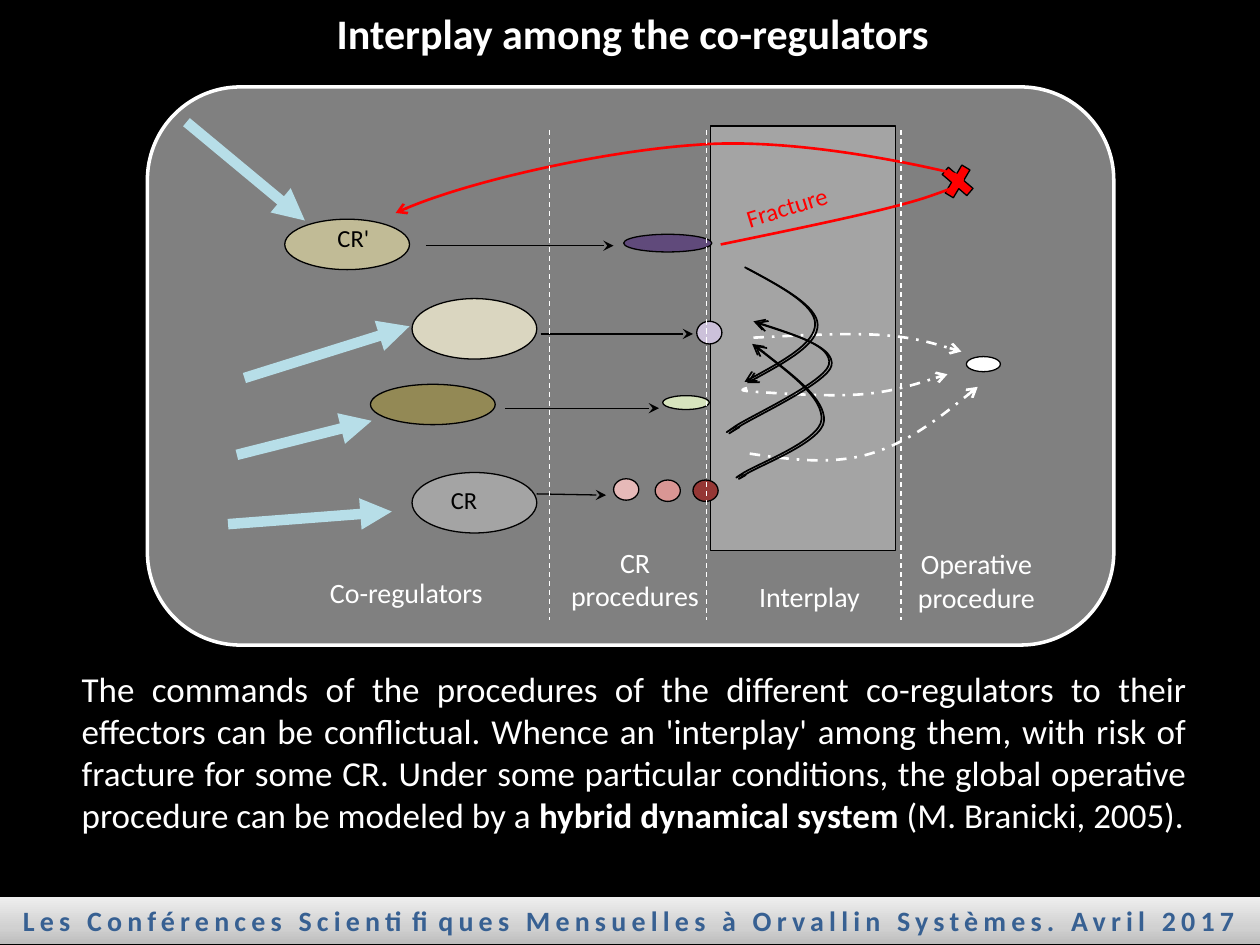
from copy import deepcopy

from lxml import etree
from pptx import Presentation
from pptx import util as u
from pptx.dml import color
from pptx.enum import dml, shapes, text
from pptx.oxml.ns import qn

COLORS = {
    "black": "000000", "white": "FFFFFF", "panel": "808080", "gray": "A6A6A6",
    "red": "FF0000", "sky": "B7DEE8", "footer": "376092",
    "sand": "C4BD97", "cream": "DDD9C3", "olive": "948A54",
    "purple": "604A7B", "lilac": "CCC1DA", "lime": "D7E4BD",
    "rose": "E6B9B8", "coral": "D99694", "brick": "953735",
}
FOOTER_STOPS = [(0, "BDBDBD"), (0.35, "D1D1D1"), (1, "EEEEEE")]
SHAPE = shapes.MSO_SHAPE
DASH = dml.MSO_LINE
ALIGN = text.PP_ALIGN


def rgb(name):
    return color.RGBColor.from_string(COLORS.get(name, name))


def add_span(para, words, size=16, ink="white", bold=False, spacing=None):
    span = para.add_run()
    span.text = words
    span.font.name = "Calibri"
    span.font.size = u.Pt(size)
    span.font.bold = bold
    span.font.color.rgb = rgb(ink)
    if spacing:
        span.font._element.set("spc", str(spacing * 100))


class SlideWriter:
    """Draws styled elements on the current slide."""

    def __init__(self, page):
        self.page = page

    def stroke(self, line, ink, width, dash=None, head=None, tail=None):
        line.color.rgb = rgb(ink)
        line.width = u.Pt(width)
        if dash:
            line.dash_style = dash
        for tag, kind in (("a:headEnd", head), ("a:tailEnd", tail)):
            if kind:
                etree.SubElement(line._get_or_add_ln(), qn(tag), type=kind)

    def shape(self, kind, left, top, width, height, fill, ink="black",
              line_width=0.75, opacity=100, rotation=0):
        shape = self.page.shapes.add_shape(
            kind, *map(u.Inches, (left, top, width, height)))
        shape.shadow.inherit = False
        shape.rotation = rotation
        shape.fill.solid()
        shape.fill.fore_color.rgb = rgb(fill)
        if opacity < 100:
            tint = shape._element.spPr.find(".//" + qn("a:srgbClr"))
            etree.SubElement(tint, qn("a:alpha"), val=str(opacity * 1000))
        self.stroke(shape.line, ink, line_width)
        return shape

    def ellipse(self, *place, **style):
        return self.shape(SHAPE.OVAL, *place, **style)

    def line(self, start, end, ink="black", width=0.75, dash=None, tail=None):
        line = self.page.shapes.add_connector(
            shapes.MSO_CONNECTOR.STRAIGHT, *map(u.Inches, (*start, *end)))
        etree.SubElement(line._element.spPr, qn("a:effectLst"))
        self.stroke(line.line, ink, width, dash, tail=tail)
        effects = line._element.spPr.find(qn("a:effectLst"))
        line._element.spPr.append(effects)

    def curve(self, points, ink, width, **ends):
        start, *rest = [tuple(map(u.Inches, point)) for point in points]
        builder = self.page.shapes.build_freeform(*start)
        builder.add_line_segments(rest, close=False)
        curve = builder.convert_to_shape()
        curve.shadow.inherit = False
        curve.fill.background()
        segments = list(curve._element.iter(qn("a:lnTo")))
        for i in range(0, len(segments), 3):
            bezier = etree.Element(qn("a:cubicBezTo"))
            segments[i].addprevious(bezier)
            for segment in segments[i:i + 3]:
                bezier.append(segment[0])
                segment.getparent().remove(segment)
        self.stroke(curve.line, ink, width, **ends)

    def text(self, left, top, width, height, *lines, align=ALIGN.CENTER,
             rotation=0, inset=0.05, **style):
        box = self.page.shapes.add_textbox(
            *map(u.Inches, (left, top, width, height)))
        box.rotation = rotation
        frame = box.text_frame
        frame.word_wrap = True
        frame.margin_top = frame.margin_bottom = u.Inches(inset)
        for i, words in enumerate(lines):
            para = frame.add_paragraph() if i else frame.paragraphs[0]
            para.alignment = align
            add_span(para, words, **style)
        return box

    def footer(self, words):
        bar = self.shape(SHAPE.RECTANGLE, 0, 7.12, 10, 0.37, "white")
        bar.line.fill.background()
        bar.fill.gradient()
        bar.fill.gradient_angle = 90
        stops = bar._element.find(".//" + qn("a:gsLst"))
        stops.append(deepcopy(stops[0]))
        for stop, (position, tint) in zip(bar.fill.gradient_stops, FOOTER_STOPS):
            stop.position = position
            stop.color.rgb = rgb(tint)
        effects = bar._element.spPr.find(qn("a:effectLst"))
        shadow = etree.SubElement(effects, qn("a:outerShdw"), blurRad="40000",
                                  dist="20000", dir="5400000", rotWithShape="0")
        tint = etree.SubElement(shadow, qn("a:srgbClr"), val=COLORS["black"])
        etree.SubElement(tint, qn("a:alpha"), val="38000")
        bar.text_frame.word_wrap = False
        para = bar.text_frame.paragraphs[0]
        para.alignment = ALIGN.CENTER
        add_span(para, words, ink="footer", bold=True, spacing=3)


def draw_regulators(writer):
    for start, end in [((4.29, 2.65), (5.5, 2.65)), ((3.38, 1.95), (4.87, 1.95)),
                       ((4.01, 3.24), (5.23, 3.24)), ((4.26, 3.92), (4.81, 3.93))]:
        writer.line(start, end, tail="stealth")
    for left, top, height, fill in [(3.27, 3.75, 0.48, "gray"), (2.94, 3.05, 0.32, "olive"),
                                    (2.26, 1.74, 0.4, "sand"), (3.27, 2.37, 0.48, "cream")]:
        writer.ellipse(left, top, 0.99, height, fill, opacity=97)
    for *place, fill in [(5.26, 3.14, 0.37, 0.11, "lime"), (4.95, 1.86, 0.7, 0.14, "purple"),
                         (5.53, 2.55, 0.2, 0.18, "lilac"), (4.87, 3.8, 0.2, 0.17, "rose"),
                         (5.2, 3.81, 0.2, 0.17, "coral"), (5.5, 3.81, 0.2, 0.17, "brick")]:
        writer.ellipse(*place, fill)
    for left, top, width, name in [(2.58, 1.77, 0.56, "CR'"), (3.48, 3.85, 0.62, "CR")]:
        writer.text(left, top, width, 0.24, name, align=ALIGN.JUSTIFY, inset=0,
                    size=14, ink="black")


def draw_interplay(writer):
    writer.ellipse(7.67, 2.83, 0.27, 0.12, "white")
    operative_curves = [
        [(5.95, 3.6), (6.28, 3.65), (6.61, 3.69), (6.91, 3.6), (7.21, 3.51), (7.49, 3.29),
         (7.76, 3.07)],
        [(5.93, 3.08), (5.89, 3.09), (5.85, 3.1), (6, 3.11), (6.15, 3.12), (6.57, 3.15),
         (6.83, 3.13), (7.08, 3.11), (7.3, 3.04), (7.52, 2.97)],
        [(5.98, 2.68), (6.36, 2.66), (6.73, 2.64), (7.01, 2.66), (7.28, 2.68), (7.63, 2.79),
         (7.63, 2.79)],
    ]
    for points in operative_curves:
        writer.curve(points, "white", 1.5, dash=DASH.DASH_DOT, tail="arrow")

    writer.text(5.81, 1.43, 1.14, 0.34, "Fracture", align=ALIGN.LEFT,
                rotation=342.6, size=14, ink="red")
    writer.shape(SHAPE.MATH_MULTIPLY, 7.44, 1.25, 0.32, 0.38, "red", rotation=350.8)
    writer.curve([(5.72, 1.94), (6.4, 1.8), (7.08, 1.66), (7.37, 1.56), (7.66, 1.46),
                  (7.76, 1.42), (7.46, 1.35), (7.15, 1.28), (6.24, 1.09), (5.52, 1.15),
                  (4.8, 1.2), (3.65, 1.45), (3.14, 1.69)], "red", 1.5, tail="arrow")

    conflict_curves = [
        ("head", [(6, 2.56), (6.31, 2.66), (6.62, 2.76), (6.6, 2.9), (6.57, 3.04),
                  (5.98, 3.31), (5.86, 3.39), (5.73, 3.48), (5.8, 3.43), (5.87, 3.39)]),
        ("tail", [(5.93, 2.13), (6.21, 2.28), (6.49, 2.43), (6.49, 2.58), (6.49, 2.73),
                  (6.21, 2.89), (5.93, 3.04)]),
        ("head", [(5.99, 2.74), (6.27, 2.96), (6.55, 3.17), (6.54, 3.34), (6.53, 3.51),
                  (6.01, 3.7), (5.91, 3.77), (5.8, 3.84), (5.92, 3.77), (5.92, 3.77)]),
    ]
    for dx, dy in [(0, 0), (-0.02, -0.01)]:
        for end, points in conflict_curves:
            writer.curve([(x + dx, y + dy) for x, y in points], "black", 1, **{end: "arrow"})


def main():
    deck = Presentation()
    deck.slide_width, deck.slide_height = u.Inches(10), u.Inches(7.5)
    page = deck.slides.add_slide(deck.slide_layouts[6])
    page.background.fill.solid()
    page.background.fill.fore_color.rgb = rgb("black")
    writer = SlideWriter(page)

    writer.footer("Les Conférences Scientifiques Mensuelles à Orvallin Systèmes. Avril 2017")
    writer.shape(SHAPE.ROUNDED_RECTANGLE, 1.17, 0.69, 7.67, 4.43, "panel", "white", 2)
    writer.shape(SHAPE.RECTANGLE, 5.64, 1, 1.47, 3.37, "gray", opacity=95)
    writer.text(2.06, 0.01, 5.85, 0.5, " Interplay among the co-regulators", size=24, bold=True)

    draw_regulators(writer)
    draw_interplay(writer)
    for x in (4.36, 5.61, 7.15):
        writer.line((x, 1.03), (x, 4.92), "white", dash=DASH.DASH)
    for start, end in [((1.94, 3), (3.25, 2.59)), ((1.48, 0.97), (2.42, 1.75)),
                       ((1.88, 3.61), (2.95, 3.34)), ((1.81, 4.16), (3.11, 4.06))]:
        writer.line(start, end, "sky", 6, tail="triangle")

    writer.text(2.5, 4.52, 1.45, 0.37, "Co-regulators")
    writer.text(4.32, 4.28, 1.44, 0.64, "CR procedures")
    writer.text(5.69, 4.55, 1.47, 0.37, "Interplay")
    writer.text(7.16, 4.29, 1.18, 0.64, "Operative", "procedure")
    body = writer.text(
        0.55, 5.25, 8.97, 2.12,
        "The commands of the procedures of the different co-regulators to their effectors "
        "can be conflictual. Whence an 'interplay' among them, with risk of fracture for "
        "some CR. Under some particular conditions, the global operative procedure can be "
        "modeled by a ", align=ALIGN.JUSTIFY, size=20)
    para = body.text_frame.paragraphs[0]
    add_span(para, "hybrid dynamical system", size=20, bold=True)
    add_span(para, " (M. Branicki, 2005).", size=20)
    deck.save("out.pptx")


if __name__ == "__main__":
    main()
